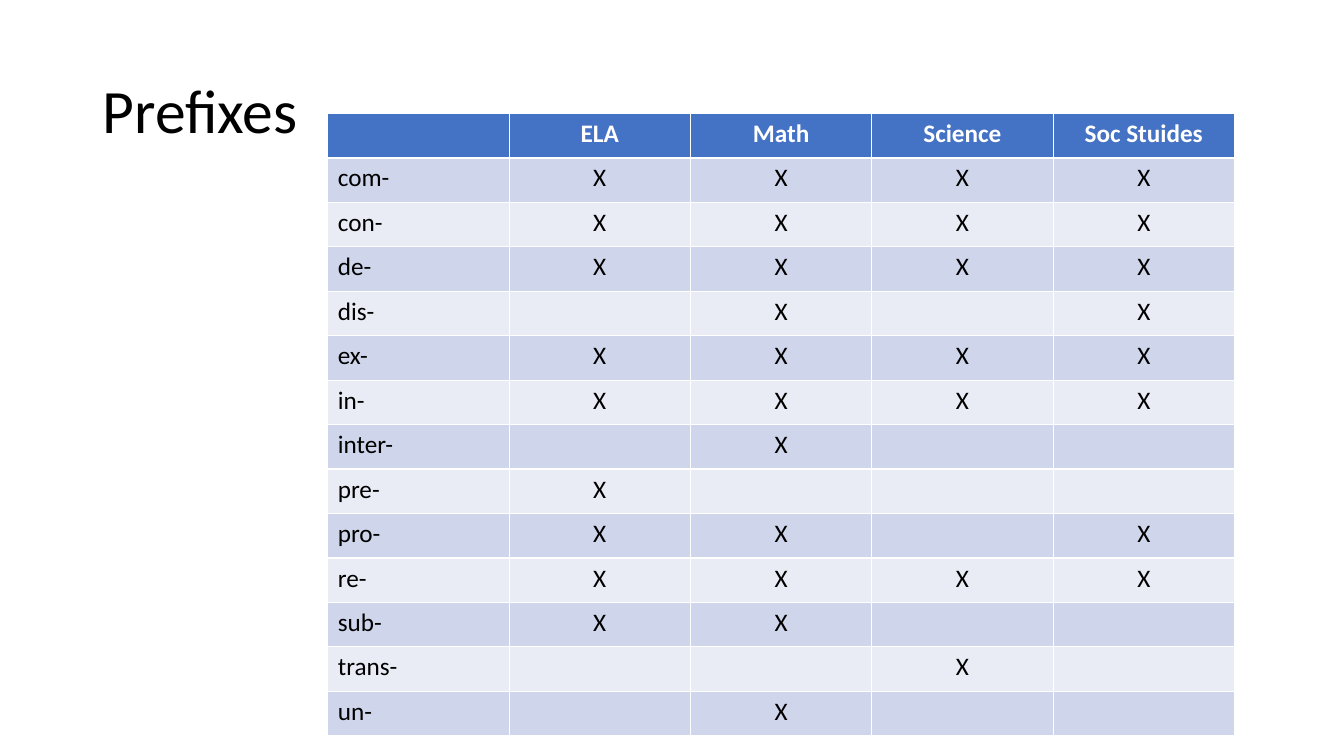
from pptx import Presentation
from pptx import util as u
from pptx.dml.color import RGBColor
from pptx.enum import text

HUES = {"ink": "000000", "paper": "FFFFFF", "head": "4472C4",
        "dark": "CFD5EA", "light": "E9EBF5"}
HEADS = ["", "ELA", "Math", "Science", "Soc Stuides"]
# One mark per subject, in the order of HEADS; a dot leaves the cell empty.
MARKS = {
    "com-": "XXXX", "con-": "XXXX", "de-": "XXXX", "dis-": ".X.X",
    "ex-": "XXXX", "in-": "XXXX", "inter-": ".X..", "pre-": "X...",
    "pro-": "XX.X", "re-": "XXXX", "sub-": "XX..", "trans-": "..X.",
    "un-": ".X..",
}


class Deck:
    """Holds the style and the current slide."""

    def __init__(self, wide, high):
        self.show = Presentation()
        self.show.slide_width = u.Cm(wide)
        self.show.slide_height = u.Cm(high)
        self.page = self.show.slides.add_slide(self.show.slide_layouts[5])

    def label(self, frame, words, hue, align, **form):
        par = frame.paragraphs[0]
        par.alignment = align
        run = par.add_run()
        run.text = words
        run.font.color.rgb = RGBColor.from_string(HUES[hue])
        for name, value in {"name": "Calibri", **form}.items():
            setattr(run.font, name, value)

    def title(self, words, left, top, width, height):
        head = self.page.shapes.title
        spots = {"left": left, "top": top, "width": width, "height": height}
        for name, value in spots.items():
            setattr(head, name, u.Cm(value))
        frame = head.text_frame
        form = {"auto_size": text.MSO_AUTO_SIZE.NONE, "word_wrap": True,
                "vertical_anchor": text.MSO_ANCHOR.MIDDLE}
        for name, value in form.items():
            setattr(frame, name, value)
        frame.paragraphs[0].line_spacing = 0.9
        self.label(frame, words, "ink", text.PP_ALIGN.LEFT, size=u.Pt(44))

    def table(self, rows, left, top, wide, high):
        """Draw rows in a banded grid; wide and high are those of one cell."""
        count, cols = len(rows), len(rows[0])
        grid = self.page.shapes.add_table(
            count, cols, u.Cm(left), u.Cm(top),
            u.Cm(wide * cols), u.Cm(high * count)).table
        for r, row in enumerate(rows):
            fill = "head" if r == 0 else "dark" if r % 2 else "light"
            for c, words in enumerate(row):
                cell = grid.cell(r, c)
                cell.fill.solid()
                cell.fill.fore_color.rgb = RGBColor.from_string(HUES[fill])
                if words:
                    align = text.PP_ALIGN.CENTER if c else text.PP_ALIGN.LEFT
                    self.label(cell.text_frame, words,
                               "ink" if r else "paper", align,
                               size=u.Pt(18), bold=r == 0)


def main():
    deck = Deck(33.87, 19.05)
    deck.title("Prefixes", 2.33, 1.01, 29.21, 3.68)
    rows = [HEADS]
    for stem, marks in MARKS.items():
        rows.append([stem] + ["X" if m == "X" else "" for m in marks])
    deck.table(rows, 8.26, 2.86, 4.57, 1.12)
    deck.show.save("out.pptx")


if __name__ == "__main__":
    main()
